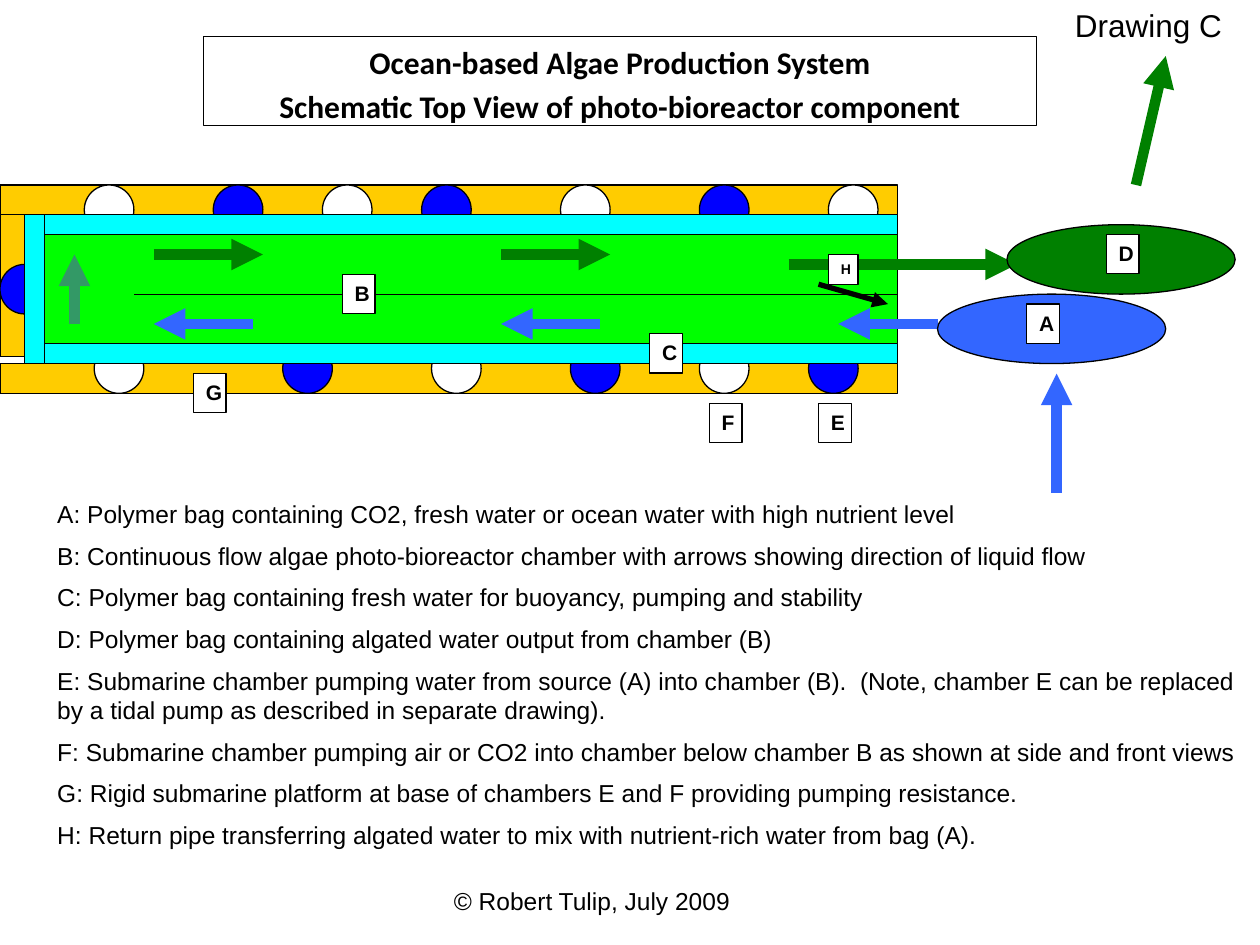
"""Build the schematic top view of an ocean-based algae photo-bioreactor."""
from lxml import etree
from pptx import Presentation, util as u
from pptx.dml.color import RGBColor
from pptx.enum import shapes, text
from pptx.oxml.ns import qn

UNIT = u.Mm(2)
COL0, ROW0 = 0.5, 0.35
BLACK, WHITE, GOLD, CYAN, LIME = "000000", "FFFFFF", "FFCC00", "00FFFF", "00FF00"
GREEN, TEAL, BLUE, WATER = "008000", "339966", "0000FF", "3366FF"
RECT, OVAL = shapes.MSO_SHAPE.RECTANGLE, shapes.MSO_SHAPE.OVAL

HEADING = ["Ocean-based Algae Production System",
           "Schematic Top View of photo-bioreactor component"]
LEGEND = [
    "A: Polymer bag containing CO2, fresh water or ocean water with high nutrient level",
    "B: Continuous flow algae photo-bioreactor chamber with arrows showing direction of liquid flow",
    "C: Polymer bag containing fresh water for buoyancy, pumping and stability",
    "D: Polymer bag containing algated water output from chamber (B)",
    "E: Submarine chamber pumping water from source (A) into chamber (B).  (Note, chamber E can "
    "be replaced by a tidal pump as described in separate drawing).",
    "F: Submarine chamber pumping air or CO2 into chamber below chamber B as shown at side and "
    "front views",
    "G: Rigid submarine platform at base of chambers E and F providing pumping resistance.",
    "H: Return pipe transferring algated water to mix with nutrient-rich water from bag (A).",
]

# Boxes are (column, row, columns wide, rows high).
PLATFORM = [(0.5, 20.8, 2.5, 15.5), (0.5, 19, 90.5, 3), (0.5, 37, 90.5, 3)]
PUMPS = [(19, WHITE, (9, 33, 57, 84)), (19, BLUE, (22, 43, 71)), (27, BLUE, (0.5,)),
         (35, WHITE, (10, 44, 71)), (35, BLUE, (29, 58, 82))]
PUMP_SIZE = 5
CHAMBER = [((5, 22, 86, 2), CYAN), ((5, 24, 86, 11), LIME), ((5, 35, 86, 2), CYAN),
           ((3, 22, 2, 15), CYAN)]
DIVIDER = (91, 30, 14, 30)
ARROWS = [
    (WATER, 6, [(95, 33, 85, 33), (61, 33, 51, 33), (26, 33, 16, 33), (107, 50, 107, 38)]),
    (TEAL, 6, [(8, 33, 8, 26)]),
    (GREEN, 6, [(16, 26, 27, 26), (51, 26, 62, 26), (80, 27, 103, 27), (115, 19, 118, 6)]),
    (BLACK, 3, [(83, 29, 90, 31)]),
]
BAGS = [((95, 30, 23, 7), WATER), ((102, 23, 23, 7), GREEN)]
LABELS = {"A": (104, 31), "B": (35, 28), "C": (66, 34), "D": (112, 24),
          "E": (83, 41), "F": (72, 41), "G": (20, 38)}
CAPTIONS = [("© Robert Tulip, July 2009", (45, 89, 34, 4.2), 14),
            ("Drawing C", (107.6, 0.35, 20, 5), 18)]


def rgb(color):
    return RGBColor.from_string(color)


def point(col, row):
    return int(UNIT * (col - COL0)), int(UNIT * (row - ROW0))


def place(box):
    return *point(*box[:2]), int(UNIT * box[2]), int(UNIT * box[3])


def outline(sp, fill):
    sp.fill.solid()
    sp.fill.fore_color.rgb = rgb(fill)
    sp.line.color.rgb = rgb(BLACK)
    sp.line.width = u.Pt(0.75)


def add_shape(s, kind, box, fill):
    sp = s.shapes.add_shape(kind, *place(box))
    sp.shadow.inherit = False
    outline(sp, fill)
    return sp


def write(sp, lines, size, font="Arial", bold=False, align=text.PP_ALIGN.LEFT, gap=0):
    tf = sp.text_frame
    tf.word_wrap = True
    tf.auto_size = text.MSO_AUTO_SIZE.NONE
    tf.vertical_anchor = text.MSO_ANCHOR.TOP
    tf.text = "\n".join(lines)
    for i, p in enumerate(tf.paragraphs):
        pPr = p._p.get_or_add_pPr()
        pPr.set("marL", "0")
        pPr.set("indent", "0")
        etree.SubElement(pPr, qn("a:buNone"))
        p.alignment = align
        p.space_before = u.Pt(gap if i else 0)
        for r in p.runs:
            r.font.size, r.font.name, r.font.bold = u.Pt(size), font, bold
            r.font.color.rgb = rgb(BLACK)


def add_line(s, ends, color, width, arrow=True):
    cn = s.shapes.add_connector(shapes.MSO_CONNECTOR.STRAIGHT, *point(*ends[:2]), *point(*ends[2:]))
    cn.line.color.rgb = rgb(color)
    cn.line.width = u.Pt(width)
    if arrow:
        etree.SubElement(cn.line._get_or_add_ln(), qn("a:tailEnd"), type="triangle")
    etree.SubElement(cn._element.spPr, qn("a:effectLst"))


def add_label(s, letter, box, size):
    write(add_shape(s, RECT, box, WHITE), [letter], size, bold=True)


def main():
    prs = Presentation()
    prs.slide_width, prs.slide_height = u.Inches(10), u.Inches(7.5)
    s = prs.slides.add_slide(prs.slide_layouts[1])

    title, body = s.placeholders
    title.left, title.top, title.width, title.height = place((21, 4, 84, 9))
    outline(title, WHITE)
    write(title, HEADING, 18, "Calibri", True, text.PP_ALIGN.CENTER, 3.6)
    body.left, body.top, body.width, body.height = place((5, 50, 122.5, 38.2))
    write(body, LEGEND, 14, gap=7)

    for box in PLATFORM:
        add_shape(s, RECT, box, GOLD)
    for row, fill, cols in PUMPS:
        for col in cols:
            add_shape(s, OVAL, (col, row, PUMP_SIZE, PUMP_SIZE), fill)
    for box, fill in CHAMBER:
        add_shape(s, RECT, box, fill)
    add_line(s, DIVIDER, BLACK, 0.75, arrow=False)
    for color, width, paths in ARROWS:
        for ends in paths:
            add_line(s, ends, color, width)
    for box, fill in BAGS:
        add_shape(s, OVAL, box, fill)
    for letter, corner in LABELS.items():
        add_label(s, letter, (*corner, 3.3, 3.95), 12)
    add_label(s, "H", (84, 26, 3, 3), 8)
    for caption, box, size in CAPTIONS:
        write(s.shapes.add_textbox(*place(box)), [caption], size)
    prs.save("out.pptx")


if __name__ == "__main__":
    main()
